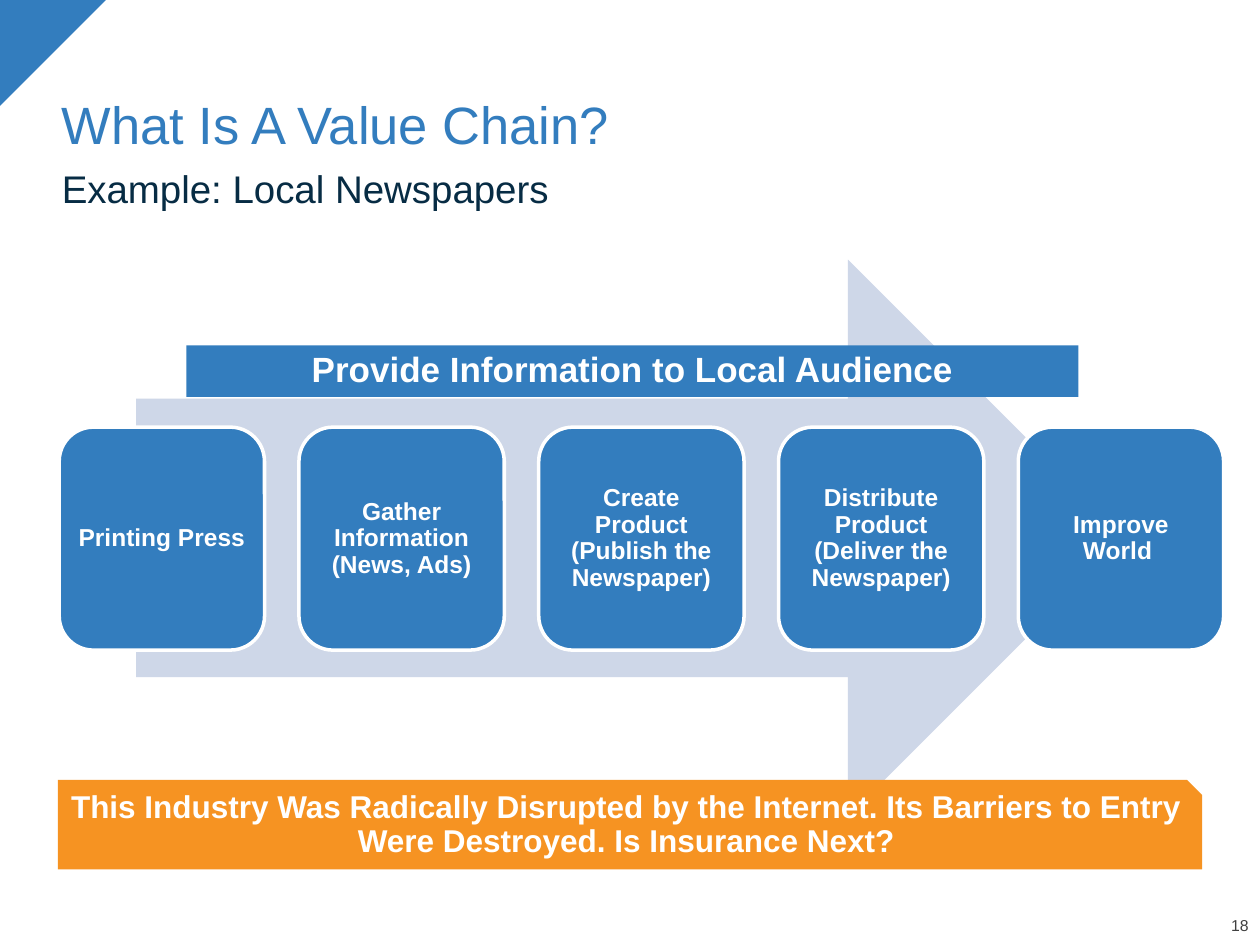
import pptx
import pptx.util
import pptx.dml.color
import pptx.enum.shapes
import pptx.enum.text
import pptx.oxml.ns
import lxml.etree

KINDS = pptx.enum.shapes.MSO_SHAPE
ALIGN = pptx.enum.text.PP_ALIGN
ANCHOR = pptx.enum.text.MSO_ANCHOR

# The grid has 100 columns and 75 rows on a 10 by 7.5 inch slide
COLS, ROWS = 100, 75
BLUE, NAVY, PALE = "337DBE", "072C44", "CED7E8"
ORANGE, WHITE, GRAY = "F69322", "FFFFFF", "404040"


def color(code):
    return pptx.dml.color.RGBColor.from_string(code)


class Deck:
    font = "Arial"

    def __init__(self):
        self.prs = pptx.Presentation()
        self.prs.slide_width = pptx.util.Inches(10)
        self.prs.slide_height = pptx.util.Inches(7.5)
        self.slide = self.prs.slides.add_slide(self.prs.slide_layouts[1])

    def box(self, left, top, width, height):
        col, row = self.prs.slide_width / COLS, self.prs.slide_height / ROWS
        return [round(left * col), round(top * row),
                round(width * col), round(height * row)]

    def words(self, item, text, size, ink, bold=False, align=ALIGN.CENTER,
              anchor=ANCHOR.MIDDLE, pad=(0.1, 0.05, 0.1, 0.05)):
        frame = item.text_frame
        frame.text = text
        frame.word_wrap = True
        frame.auto_size = pptx.enum.text.MSO_AUTO_SIZE.NONE
        frame.vertical_anchor = anchor
        (frame.margin_left, frame.margin_top, frame.margin_right,
         frame.margin_bottom) = map(pptx.util.Inches, pad)
        para = frame.paragraphs[0]
        para.alignment = align
        para.line_spacing = 0.9
        para.space_before = pptx.util.Pt(0)
        for run in para.runs:
            run.font.name = self.font
            run.font.size = pptx.util.Pt(size)
            run.font.bold = bold
            run.font.color.rgb = color(ink)

    def holder(self, index, place, text, size, ink, anchor):
        item = self.slide.placeholders[index]
        item.left, item.top, item.width, item.height = self.box(*place)
        self.words(item, text, size, ink, align=ALIGN.LEFT, anchor=anchor)
        return item

    def plain(self, item):
        # Take the bullet and its indent off
        props = item.text_frame.paragraphs[0]._p.get_or_add_pPr()
        props.set("marL", "0")
        props.set("indent", "0")
        lxml.etree.SubElement(props, pptx.oxml.ns.qn("a:buNone"))

    def shape(self, kind, place, fill, edge=None):
        item = self.slide.shapes.add_shape(kind, *self.box(*place))
        item.shadow.inherit = False
        item.fill.solid()
        item.fill.fore_color.rgb = color(fill)
        if edge:
            item.line.color.rgb = color(edge)
            item.line.width = pptx.util.Pt(2)
        else:
            item.line.fill.background()
        return item

    def label(self, place, text, size, ink, **look):
        item = self.slide.shapes.add_textbox(*self.box(*place))
        self.words(item, text, size, ink, **look)


def main():
    deck = Deck()

    # Corner and page number
    deck.shape(KINDS.RIGHT_TRIANGLE, (0, 0, 8.4, 8.4), BLUE).rotation = 90
    deck.label((94.3, 72.9, 4.8, 1.3), "18", 9, GRAY, align=ALIGN.RIGHT,
               anchor=ANCHOR.BOTTOM, pad=(0, 0, 0, 0))

    # Title and subtitle
    deck.holder(0, (3.9, 2.5, 92.5, 10.4), "What Is A Value Chain?",
                30, BLUE, ANCHOR.BOTTOM)
    body = deck.holder(1, (3.9, 13, 92.5, 4.3), "Example: Local Newspapers",
                       22, NAVY, ANCHOR.TOP)
    deck.plain(body)

    # Chain of steps on the arrow
    deck.shape(KINDS.RIGHT_ARROW, (10.8, 20.6, 78.6, 44.2), PALE)
    steps = ["Printing Press", "Gather Information (News, Ads)",
             "Create Product (Publish the Newspaper)",
             "Distribute Product (Deliver the Newspaper)", "Improve World "]
    first, pitch = 4.7, 19.03
    for num, step in enumerate(steps):
        card = deck.shape(KINDS.ROUNDED_RECTANGLE,
                          (first + num * pitch, 33.9, 16.3, 17.7), BLUE, WHITE)
        deck.words(card, step, 14, WHITE, bold=True, pad=[0.06] * 4)

    # Banner and closing message
    band = deck.shape(KINDS.RECTANGLE, (14.8, 27.4, 70.8, 4.1), BLUE)
    deck.words(band, "Provide Information to Local Audience", 20, WHITE,
               bold=True)
    note = deck.shape(KINDS.SNIP_1_RECTANGLE, (4.6, 61.9, 90.8, 7.1), ORANGE)
    deck.words(note, "This Industry Was Radically Disrupted by the Internet. "
               "Its Barriers to Entry Were Destroyed. Is Insurance Next?",
               18, WHITE, bold=True, pad=(0.1, 0.05, 0.1, 0.1))

    deck.prs.save("out.pptx")


if __name__ == "__main__":
    main()
